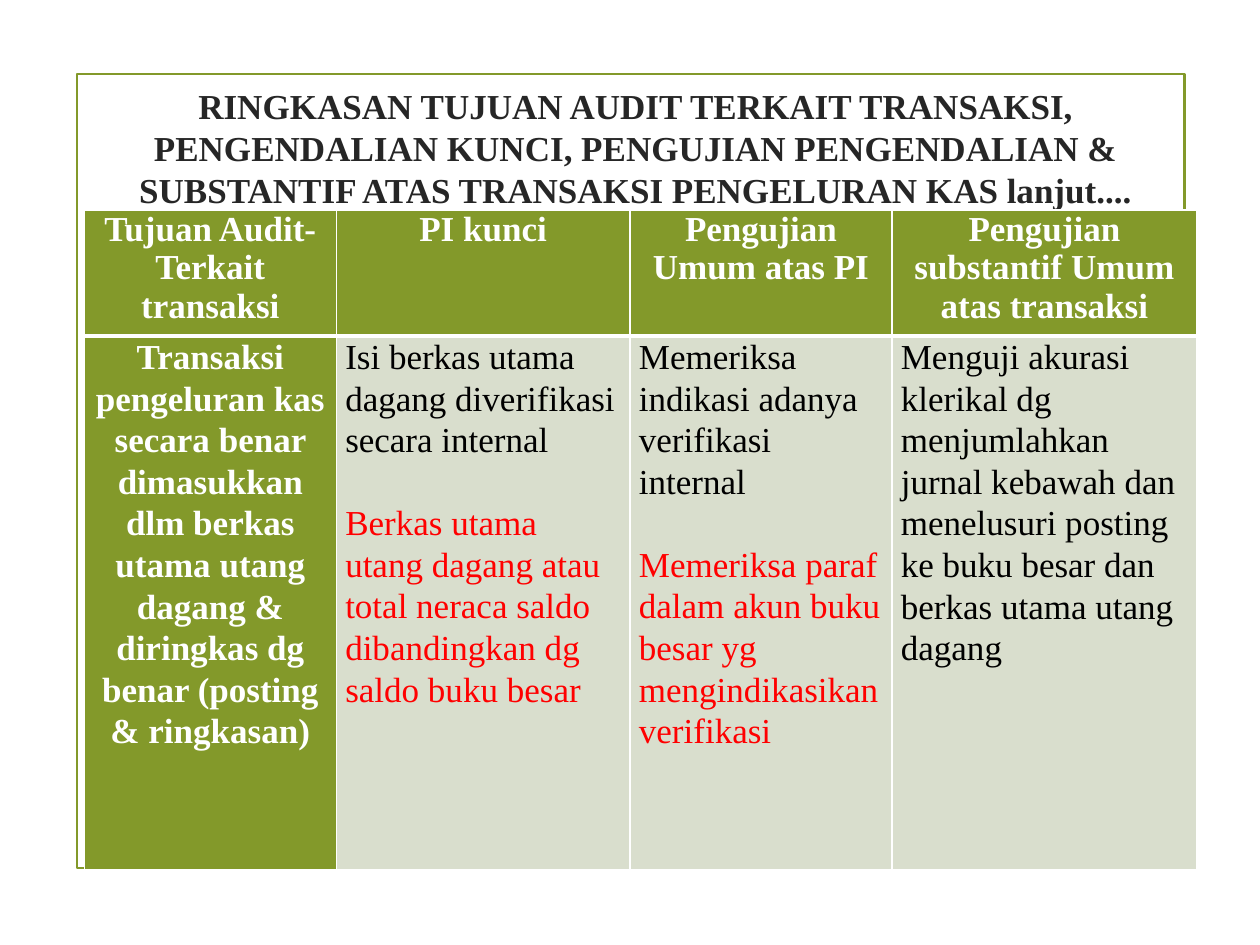
import dataclasses
import typing

import lxml.etree
import pptx
import pptx.dml.color
import pptx.enum.shapes
import pptx.enum.text
import pptx.oxml.ns
import pptx.util

Cm = pptx.util.Cm
Pt = pptx.util.Pt
ALIGN = pptx.enum.text.PP_ALIGN
ANCHOR = pptx.enum.text.MSO_ANCHOR

FONT = "Times New Roman"
TIGHT = 1.0
LOOSE = 1.07
GAP = 23.7
COLORS = {
    "green": "83992A",
    "pale": "D9DECD",
    "white": "FFFFFF",
    "black": "000000",
    "dark": "262626",
    "red": "FF0000",
}


@dataclasses.dataclass
class Column:
    width: float
    head: str
    body: str
    extra: str = ""


TITLE = (
    "RINGKASAN TUJUAN AUDIT TERKAIT TRANSAKSI, PENGENDALIAN KUNCI, "
    "PENGUJIAN PENGENDALIAN & SUBSTANTIF ATAS TRANSAKSI PENGELURAN KAS lanjut...."
)
COLUMNS = [
    Column(
        5.08,
        "Tujuan Audit-Terkait transaksi",
        "Transaksi pengeluran kas secara benar dimasukkan dlm berkas utama "
        "utang dagang & diringkas dg benar (posting & ringkasan)",
    ),
    Column(
        5.92,
        "PI kunci",
        "Isi berkas utama dagang diverifikasi secara internal",
        "Berkas utama utang dagang atau total neraca saldo dibandingkan dg "
        "saldo buku besar",
    ),
    Column(
        5.28,
        "Pengujian Umum atas PI",
        "Memeriksa indikasi adanya verifikasi internal",
        "Memeriksa paraf dalam akun buku besar yg mengindikasikan verifikasi",
    ),
    Column(
        6.15,
        "Pengujian substantif Umum atas transaksi",
        "Menguji akurasi klerikal dg menjumlahkan jurnal kebawah dan "
        "menelusuri posting ke buku besar dan berkas utama utang dagang",
    ),
]
ROWS = [2.49, 10.77]


def tint(name: str) -> pptx.dml.color.RGBColor:
    return pptx.dml.color.RGBColor.from_string(COLORS[name])


def write(para: typing.Any, text: str, color: str, bold: bool, lead: float) -> None:
    para.text = text
    para.alignment = ALIGN.CENTER if bold else ALIGN.LEFT
    para.line_spacing = lead
    para.font.name = FONT
    para.font.size = Pt(20)
    para.font.bold = bold
    para.font.color.rgb = tint(color)


def edge(cell: typing.Any, widths: typing.Dict[str, float]) -> None:
    qn = pptx.oxml.ns.qn
    props = cell._tc.get_or_add_tcPr()
    for spot, (side, width) in enumerate(widths.items()):
        line = lxml.etree.Element(qn(f"a:ln{side}"), w=str(Pt(width)))
        fill = lxml.etree.SubElement(line, qn("a:solidFill"))
        lxml.etree.SubElement(fill, qn("a:srgbClr"), val=COLORS["white"])
        props.insert(spot, line)


def dress(cell: typing.Any, text: str, row: int, main: bool) -> None:
    cell.margin_left = cell.margin_right = Cm(0.18)
    cell.margin_top = cell.margin_bottom = Cm(0)
    cell.vertical_anchor = ANCHOR.TOP
    cell.fill.solid()
    cell.fill.fore_color.rgb = tint("green" if main else "pale")
    top, base, lead = (1, 3, TIGHT) if row == 0 else (3, 1, LOOSE)
    edge(cell, {"L": 1, "R": 1, "T": top, "B": base})
    para = cell.text_frame.paragraphs[0]
    write(para, text, "white" if main else "black", main, lead)


def frame(slide: typing.Any) -> None:
    kind = pptx.enum.shapes.MSO_SHAPE.RECTANGLE
    box = slide.shapes.add_shape(kind, Cm(1.55), Cm(1.5), Cm(22.33), Cm(16))
    box.shadow.inherit = False
    box.fill.background()
    box.line.color.rgb = tint("green")
    box.line.width = Pt(1.25)


def title(slide: typing.Any) -> None:
    box = slide.shapes.add_textbox(Cm(1.7), Cm(1.7), Cm(22.23), Cm(2.54))
    text = box.text_frame
    text.word_wrap = True
    text.vertical_anchor = ANCHOR.MIDDLE
    write(text.paragraphs[0], TITLE, "dark", True, TIGHT)


def grid(slide: typing.Any) -> None:
    width = sum(col.width for col in COLUMNS)
    table = slide.shapes.add_table(
        len(ROWS), len(COLUMNS), Cm(1.7), Cm(4.23), Cm(width), Cm(sum(ROWS))
    ).table
    for row, height in zip(table.rows, ROWS):
        row.height = Cm(height)
    for num, col in enumerate(COLUMNS):
        table.columns[num].width = Cm(col.width)
        dress(table.cell(0, num), col.head, 0, True)
        cell = table.cell(1, num)
        dress(cell, col.body, 1, num == 0)
        if col.extra:
            para = cell.text_frame.add_paragraph()
            write(para, col.extra, "red", False, LOOSE)
            para.space_before = Pt(GAP)


def main() -> None:
    deck = pptx.Presentation()
    deck.slide_width = Cm(25.4)
    deck.slide_height = Cm(19.05)
    slide = deck.slides.add_slide(deck.slide_layouts[6])
    frame(slide)
    title(slide)
    grid(slide)
    deck.save("out.pptx")


if __name__ == "__main__":
    main()
